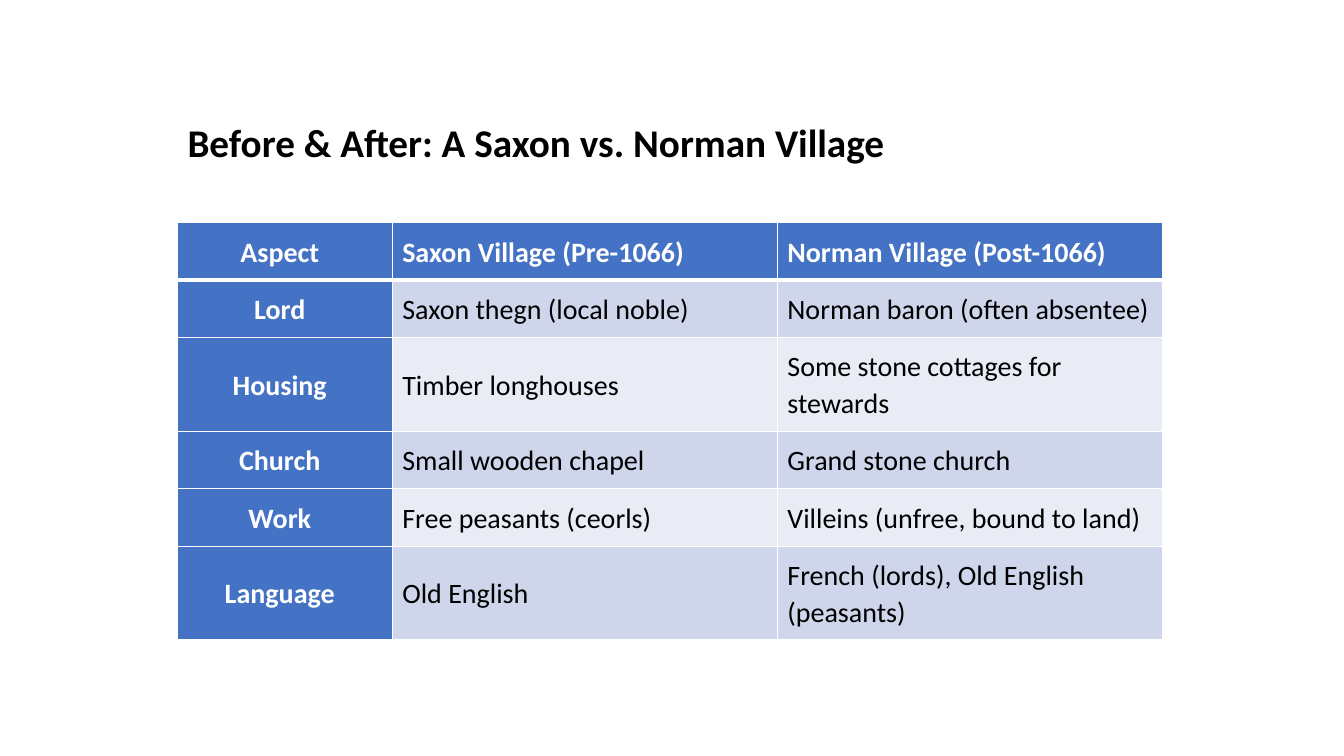
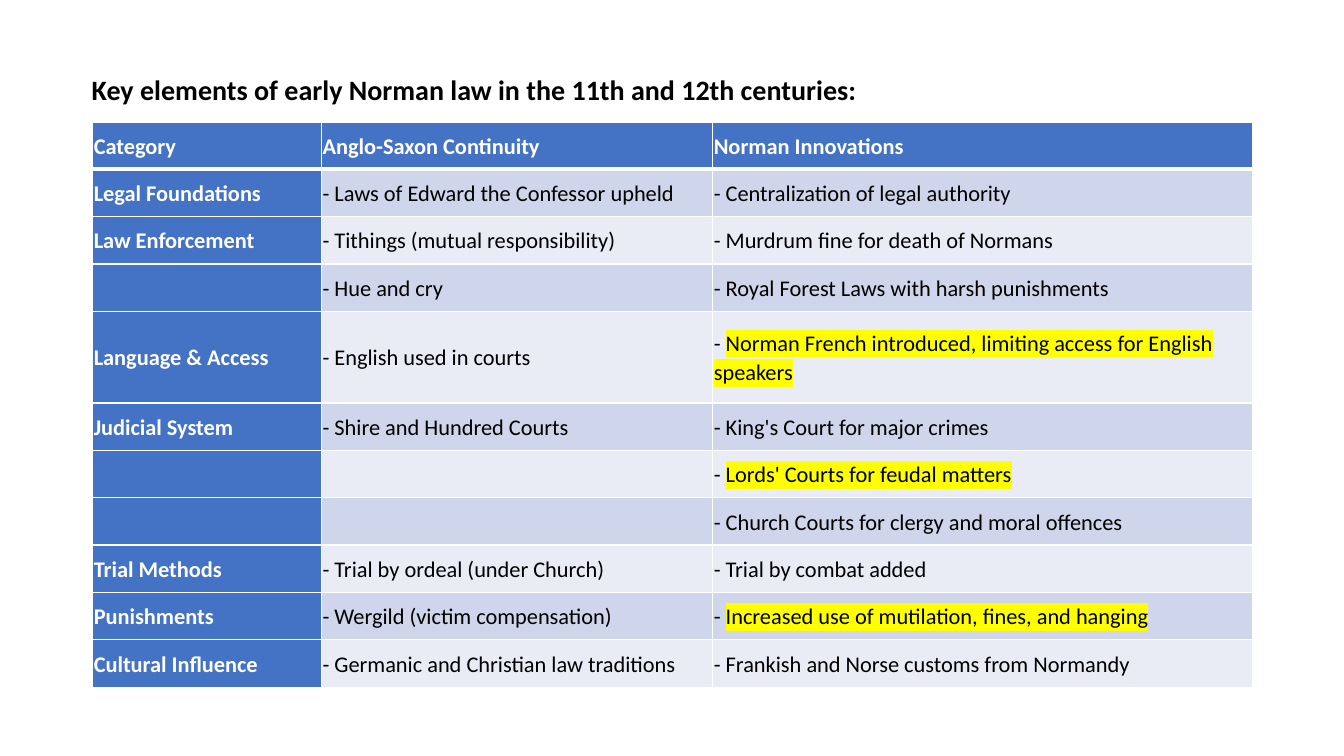
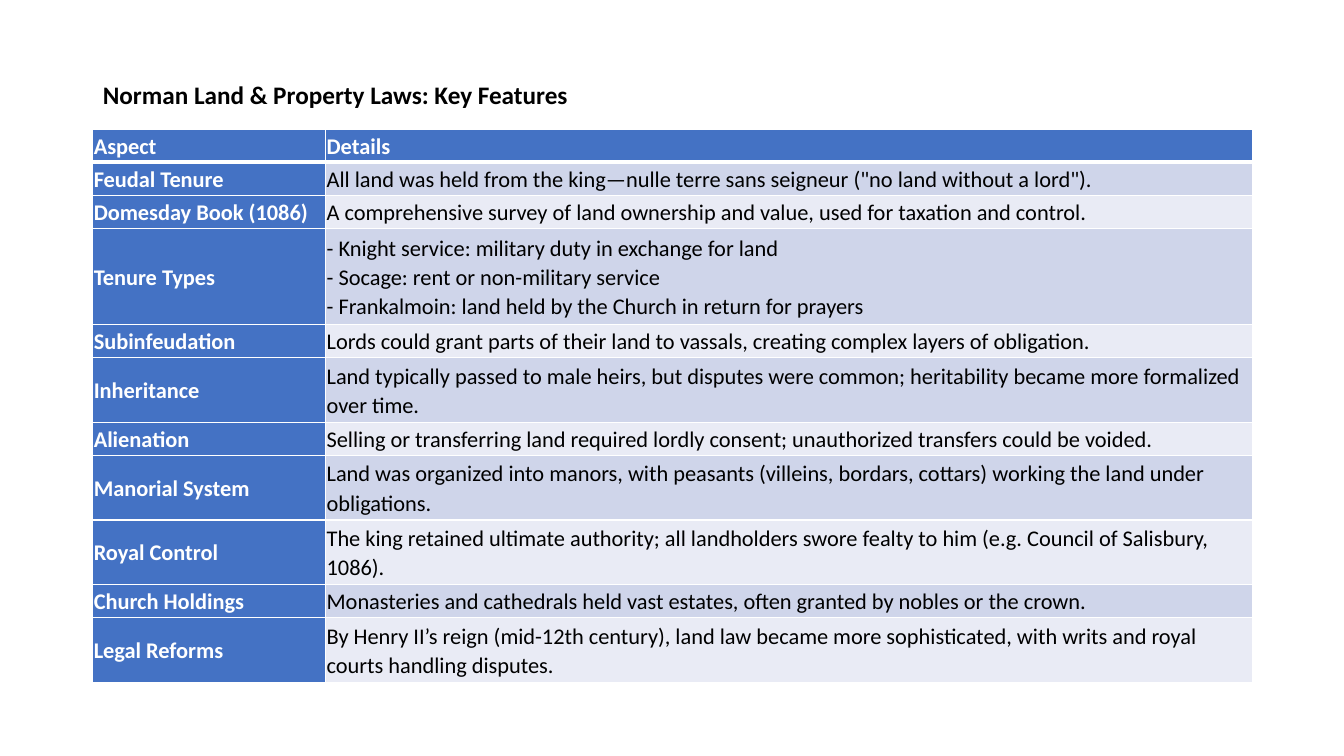
"""Build three slides of tables on Saxon and Norman village life and law."""
from dataclasses import dataclass

from lxml import etree
from pptx import Presentation
from pptx import util as u
from pptx.dml.color import RGBColor
from pptx.enum import text
from pptx.oxml import ns


@dataclass(frozen=True)
class Theme:
    """Colours, type sizes and line widths shared by the slides."""
    font: str = "Calibri"
    ink: str = "000000"
    white: str = "FFFFFF"
    accent: str = "4472C4"
    bands: tuple = ("CFD5EA", "E9EBF5")
    marker: str = "FFFF00"
    title_sizes: tuple = (28, 20, 18)
    cell_sizes: tuple = (20, 16, 16)
    line_spacing: float = 1.07
    space_after: int = 8
    rule: int = 1
    header_rule: int = 3


T = Theme()
TIGHT = (0.01,) * 4

VILLAGES = [
    ("Aspect", "Saxon Village (Pre-1066)", "Norman Village (Post-1066)"),
    ("Lord", "Saxon thegn (local noble)", "Norman baron (often absentee)"),
    ("Housing", "Timber longhouses", "Some stone cottages for stewards"),
    ("Church", "Small wooden chapel", "Grand stone church"),
    ("Work", "Free peasants (ceorls)", "Villeins (unfree, bound to land)"),
    ("Language", "Old English", "French (lords), Old English (peasants)"),
]

EARLY_LAW = [
    ("Category", "Anglo-Saxon Continuity", "Norman Innovations"),
    ("Legal Foundations", "- Laws of Edward the Confessor upheld",
     "- Centralization of legal authority"),
    ("Law Enforcement", "- Tithings (mutual responsibility)",
     "- Murdrum fine for death of Normans"),
    ("", "- Hue and cry", "- Royal Forest Laws with harsh punishments"),
    ("Language & Access", "- English used in courts",
     ("- ", "Norman French introduced, limiting access for English speakers")),
    ("Judicial System", "- Shire and Hundred Courts",
     "- King's Court for major crimes"),
    ("", "", ("- ", "Lords' Courts for feudal matters")),
    ("", "", "- Church Courts for clergy and moral offences"),
    ("Trial Methods", "- Trial by ordeal (under Church)",
     "- Trial by combat added"),
    ("Punishments", "- Wergild (victim compensation)",
     ("- ", "Increased use of mutilation, fines, and hanging")),
    ("Cultural Influence", "- Germanic and Christian law traditions",
     "- Frankish and Norse customs from Normandy"),
]

LAND_LAW = [
    ("Aspect", "Details"),
    ("Feudal Tenure", "All land was held from the king—nulle terre sans "
     "seigneur (\"no land without a lord\")."),
    ("Domesday Book (1086)", "A comprehensive survey of land ownership and "
     "value, used for taxation and control."),
    ("Tenure Types", "- Knight service: military duty in exchange for land\n"
     "- Socage: rent or non-military service\n"
     "- Frankalmoin: land held by the Church in return for prayers"),
    ("Subinfeudation", "Lords could grant parts of their land to vassals, "
     "creating complex layers of obligation."),
    ("Inheritance", "Land typically passed to male heirs, but disputes were "
     "common; heritability became more formalized over time."),
    ("Alienation", "Selling or transferring land required lordly consent; "
     "unauthorized transfers could be voided."),
    ("Manorial System", "Land was organized into manors, with peasants "
     "(villeins, bordars, cottars) working the land under obligations."),
    ("Royal Control", "The king retained ultimate authority; all landholders "
     "swore fealty to him (e.g. Council of Salisbury, 1086)."),
    ("Church Holdings", "Monasteries and cathedrals held vast estates, often "
     "granted by nobles or the crown."),
    ("Legal Reforms", "By Henry II’s reign (mid-12th century), land law "
     "became more sophisticated, with writs and royal courts handling "
     "disputes."),
]


def add_run(p, words, size, color, bold, marked=False):
    """Add one formatted run, highlighted if marked."""
    r = p.add_run()
    r.text = words
    r.font.size, r.font.bold = u.Pt(size), bold
    r.font.color.rgb = RGBColor.from_string(color)
    if marked:
        hl = etree.SubElement(r.font._element, ns.qn("a:highlight"))
        etree.SubElement(hl, ns.qn("a:srgbClr"), val=T.marker)
    r.font.name = T.font


def add_title(s, words, size, box):
    """Move and fill the title placeholder."""
    sp = s.shapes.title
    sp.left, sp.top, sp.width, sp.height = map(u.Inches, box)
    tf = sp.text_frame
    tf.word_wrap = True
    tf.auto_size = text.MSO_AUTO_SIZE.SHAPE_TO_FIT_TEXT
    tf.vertical_anchor = text.MSO_ANCHOR.TOP
    p = tf.paragraphs[0]
    p.alignment = text.PP_ALIGN.LEFT
    add_run(p, words, size, T.ink, True)


def set_borders(cell, row):
    """Draw white cell borders, thicker under the header row."""
    widths = {"lnL": T.rule, "lnR": T.rule,
              "lnT": T.header_rule if row == 1 else T.rule,
              "lnB": T.header_rule if row == 0 else T.rule}
    tcPr = cell._tc.get_or_add_tcPr()
    for tag, width in widths.items():
        ln = etree.SubElement(tcPr, ns.qn("a:" + tag), w=str(u.Pt(width)))
        fill = etree.SubElement(ln, ns.qn("a:solidFill"))
        etree.SubElement(fill, ns.qn("a:srgbClr"), val=T.white)


def fill_cell(cell, content, size, row, col, insets, align):
    """Format one cell and write its plain and highlighted text."""
    heading = row == 0 or col == 0
    set_borders(cell, row)
    cell.fill.solid()
    cell.fill.fore_color.rgb = RGBColor.from_string(
        T.accent if heading else T.bands[(row - 1) % 2])
    cell.vertical_anchor = text.MSO_ANCHOR.MIDDLE
    (cell.margin_left, cell.margin_top,
     cell.margin_right, cell.margin_bottom) = map(u.Inches, insets)
    p = cell.text_frame.paragraphs[0]
    p.alignment = align
    p.line_spacing, p.space_after = T.line_spacing, u.Pt(T.space_after)
    if not content:
        p.font.size = u.Pt(size)
        return
    plain, marked = (content, "") if isinstance(content, str) else content
    color = T.white if heading else T.ink
    for i, line in enumerate(plain.split("\n")):
        if i:
            p.add_line_break()
        add_run(p, line, size, color, heading)
    if marked:
        add_run(p, marked, size, color, heading, True)


def add_grid(s, rows, size, corner, widths, heights, insets=TIGHT,
             first_insets=TIGHT, first_align=text.PP_ALIGN.LEFT):
    """Add a table with a header row, a heading column and banded rows."""
    box = (*corner, sum(widths), sum(heights))
    tbl = s.shapes.add_table(len(rows), len(widths),
                             *map(u.Inches, box)).table
    tbl.first_col = True
    for column, width in zip(tbl.columns, widths):
        column.width = u.Inches(width)
    for r, (row, height) in enumerate(zip(rows, heights)):
        tbl.rows[r].height = u.Inches(height)
        for c, content in enumerate(row):
            fill_cell(tbl.cell(r, c), content, size, r, c,
                      insets if c else first_insets,
                      text.PP_ALIGN.LEFT if c else first_align)


def main():
    """Build and save the presentation."""
    prs = Presentation()
    prs.slide_width, prs.slide_height = u.Inches(13.33), u.Inches(7.5)
    titles = [
        ("Before & After: A Saxon vs. Norman Village",
         (1.76, 1.12, 9.81, 0.88)),
        ("Key elements of early Norman law in the 11th and 12th centuries:",
         (0.81, 0.67, 11.52, 0.44)),
        ("Norman Land & Property Laws: Key Features",
         (0.92, 0.74, 8.13, 0.4)),
    ]
    one, two, three = 0.33, 0.64, 0.95
    grids = [
        dict(rows=VILLAGES, corner=(1.76, 2.21), widths=(2.13, 3.82, 3.82),
             heights=(0.57, 0.57, 0.93, 0.57, 0.57, 0.93),
             insets=(0.1,) * 4, first_insets=(0, 0.1, 0.1, 0.1),
             first_align=text.PP_ALIGN.CENTER),
        dict(rows=EARLY_LAW, corner=(0.92, 1.21), widths=(2.27, 3.88, 5.35),
             heights=[0.47] * 4 + [0.91] + [0.47] * 6),
        dict(rows=LAND_LAW, corner=(0.92, 1.28), widths=(2.31, 9.19),
             heights=(one, one, one, three, one, two, one, two, two, one,
                      two)),
    ]
    for (words, box), grid, title_size, cell_size in zip(
            titles, grids, T.title_sizes, T.cell_sizes):
        s = prs.slides.add_slide(prs.slide_layouts.get_by_name("Title Only"))
        add_title(s, words, title_size, box)
        add_grid(s, size=cell_size, **grid)
    prs.save("out.pptx")


if __name__ == "__main__":
    main()
